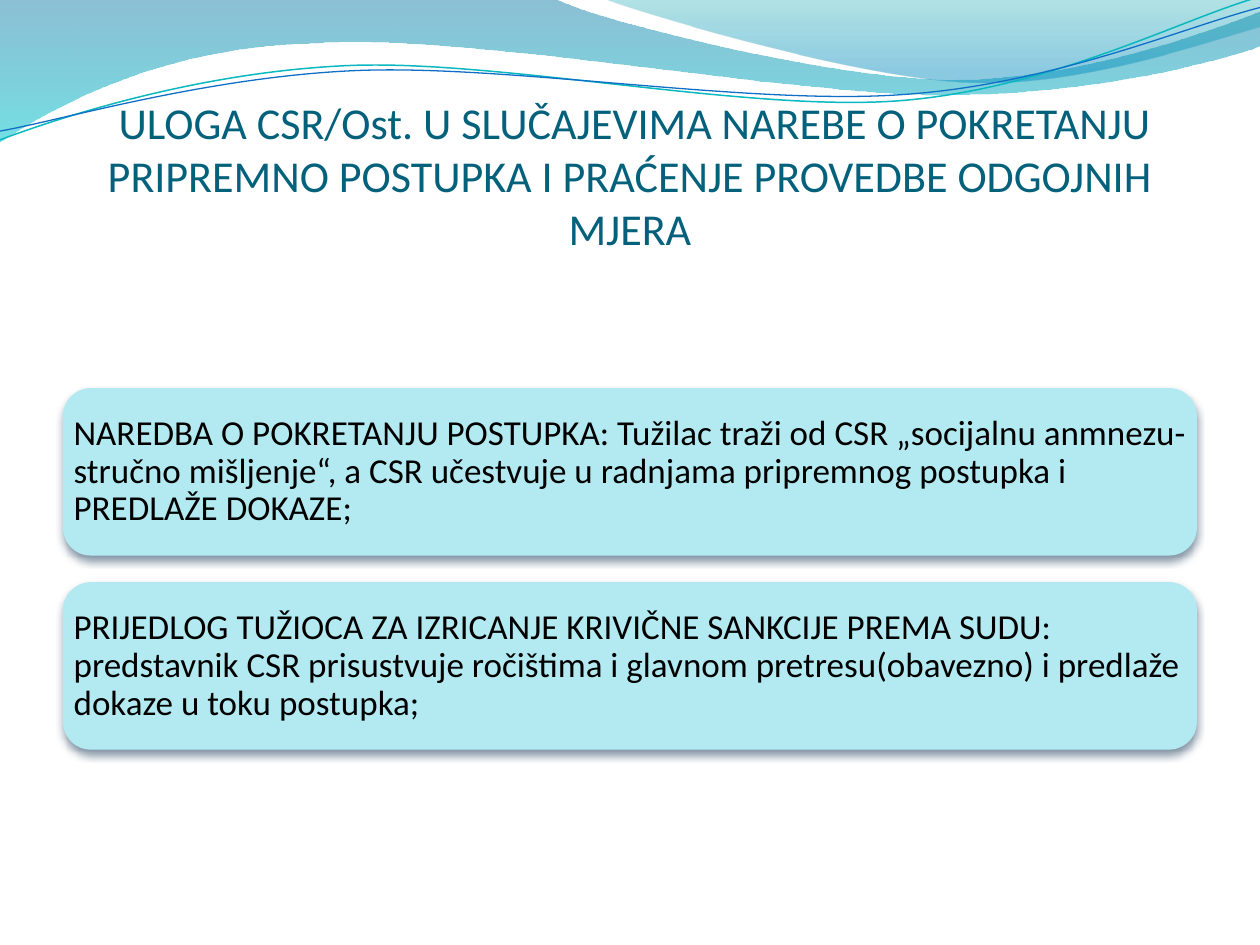
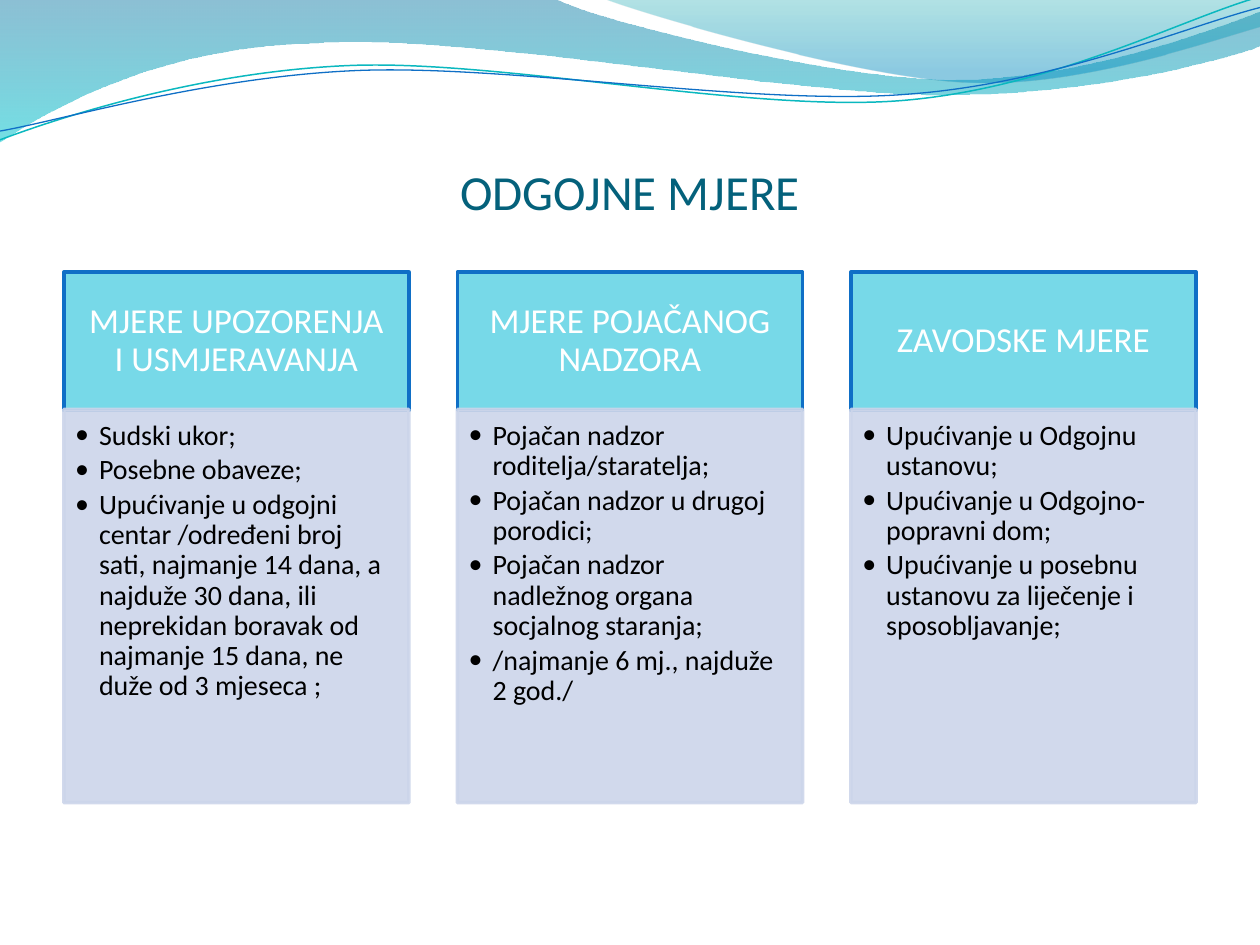
import math

from lxml import etree
from pptx import Presentation
from pptx.dml.color import RGBColor
from pptx.enum.shapes import MSO_SHAPE
from pptx.enum.text import MSO_ANCHOR, PP_ALIGN
from pptx.oxml.ns import qn
from pptx.util import Inches, Pt

RECT, ROUNDED = MSO_SHAPE.RECTANGLE, MSO_SHAPE.ROUNDED_RECTANGLE
TOP, MIDDLE, BOTTOM = MSO_ANCHOR.TOP, MSO_ANCHOR.MIDDLE, MSO_ANCHOR.BOTTOM
LEFT, CENTER = PP_ALIGN.LEFT, PP_ALIGN.CENTER

FONT = "Calibri"
TITLE_COLOR, BLACK, WHITE = "04617B", "000000", "FFFFFF"
CARD_FILL, SHADOW = "B3EAF2", "042747"
HEADER_FILL, HEADER_LINE, LIST_FILL = "77D9E8", "0F6FC6", "CCD5EA"
MARGIN, CONTENT_WIDTH = 0.5, 9
LINE_TILT = 357.3

# Wave outlines in inches: one point is a corner, three are a Bezier curve
BIG_WAVE = [[(0, 0)], [(4.4, -0.01)],
            [(4.76, 0.17), (6.64, 0.63), (7.58, 0.63)],
            [(8.53, 0.63), (9.58, 0.26), (10, 0.09)], [(10.01, 0.36)],
            [(9.83, 0.44), (8.7, 0.76), (7.46, 0.75)],
            [(6.22, 0.75), (3.82, 0.28), (2.57, 0.34)],
            [(1.29, 0.36), (0.46, 0.83), (-0.01, 1.13)], [(0, 0)]]
RIGHT_WAVE = [[(4.79, -0.01)],
              [(5.09, 0.11), (6.82, 0.62), (7.69, 0.65)],
              [(8.56, 0.69), (9.61, 0.32), (10, 0.21)], [(10, 0)], [(4.79, -0.01)]]
TEAL_LINE = [[(0, 1.11)],
             [(0.48, 0.93), (1.58, 0.57), (2.77, 0.52)],
             [(3.95, 0.47), (5.93, 0.89), (7.13, 0.8)],
             [(8.33, 0.71), (9.38, 0.15), (9.98, -0.02)]]
BLUE_LINE = [[(0, 1.04)],
             [(0.47, 0.96), (1.64, 0.61), (2.83, 0.56)],
             [(4.03, 0.51), (5.97, 0.84), (7.17, 0.75)],
             [(8.36, 0.67), (9.41, 0.21), (10, 0.06)]]

CARDS = [
    "NAREDBA O POKRETANJU POSTUPKA: Tužilac traži od CSR „socijalnu anmnezu-stručno "
    "mišljenje“, a CSR učestvuje u radnjama pripremnog postupka i PREDLAŽE DOKAZE;",
    "PRIJEDLOG TUŽIOCA ZA IZRICANJE KRIVIČNE SANKCIJE PREMA SUDU: predstavnik CSR "
    "prisustvuje ročištima i glavnom pretresu(obavezno) i predlaže dokaze u toku postupka;",
]
MEASURES = [
    ("MJERE UPOZORENJA I USMJERAVANJA", [
        "Sudski ukor;",
        "Posebne obaveze;",
        "Upućivanje u odgojni centar /određeni broj sati, najmanje 14 dana, a najduže "
        "30 dana, ili neprekidan boravak od najmanje 15 dana, ne duže od 3 mjeseca ;"]),
    ("MJERE POJAČANOG NADZORA", [
        "Pojačan nadzor roditelja/staratelja;",
        "Pojačan nadzor u drugoj porodici;",
        "Pojačan nadzor nadležnog organa socjalnog staranja;",
        "/najmanje 6 mj., najduže 2 god./"]),
    ("ZAVODSKE MJERE", [
        "Upućivanje u Odgojnu ustanovu;",
        "Upućivanje u Odgojno-popravni dom;",
        "Upućivanje u posebnu ustanovu za liječenje i sposobljavanje;"]),
]


def color(hex_text):
    return RGBColor.from_string(hex_text)


def set_alphas(shape, percents):
    """Give the shape's colours, in order, these opacities."""
    for node, percent in zip(shape.element.spPr.iter(qn("a:srgbClr")), percents):
        etree.SubElement(node, qn("a:alpha"), val=str(percent * 1000))


def turn_outline(outline, degrees, center=(4.99, 0.57)):
    """Turn every point clockwise about the center."""
    sine, cosine = math.sin(math.radians(degrees)), math.cos(math.radians(degrees))
    cx, cy = center
    return [[(cx + (x - cx) * cosine - (y - cy) * sine,
              cy + (x - cx) * sine + (y - cy) * cosine) for x, y in segment]
            for segment in outline]


def add_outline(page, outline, close):
    points = [(Inches(x), Inches(y)) for segment in outline for x, y in segment]
    builder = page.shapes.build_freeform(*points[0])
    builder.add_line_segments(points[1:], close=close)
    shape = builder.convert_to_shape()
    shape.shadow.inherit = False
    # Join each run of three points into one curve
    corners = shape.element.spPr.iter(qn("a:lnTo"))
    corners = iter(list(corners))
    for segment in outline[1:]:
        nodes = [next(corners) for _ in segment]
        if len(nodes) == 3:
            curve = etree.Element(qn("a:cubicBezTo"))
            nodes[0].addprevious(curve)
            for node in nodes:
                curve.append(node[0])
                node.getparent().remove(node)
    return shape


def add_wave(page, outline, stops):
    shape = add_outline(page, outline, close=True)
    shape.line.fill.background()
    shape.fill.gradient()
    shape.fill.gradient_angle = 270
    for stop, (position, hex_text, _) in zip(shape.fill.gradient_stops, stops):
        stop.position = position
        stop.color.rgb = color(hex_text)
    set_alphas(shape, [alpha for _, _, alpha in stops])


def add_wave_line(page, outline, hex_text, width):
    shape = add_outline(page, turn_outline(outline, -LINE_TILT), close=False)
    shape.rotation = LINE_TILT
    shape.fill.background()
    shape.line.color.rgb = color(hex_text)
    shape.line.width = Pt(width)


def add_waves(page):
    add_wave(page, BIG_WAVE, [(0, "0074A1", 45), (1, "00C6CF", 55)])
    add_wave(page, RIGHT_WAVE, [(0, "00A1A9", 30), (0.8, "008BBF", 45)])
    add_wave_line(page, TEAL_LINE, "0AB8BF", 0.85)
    add_wave_line(page, BLUE_LINE, HEADER_LINE, 0.75)


def write(shape, lines, size, hex_text, align, anchor, insets, spacing=0.9):
    frame = shape.text_frame
    frame.word_wrap = True
    frame.vertical_anchor = anchor
    (frame.margin_left, frame.margin_top,
     frame.margin_right, frame.margin_bottom) = [Inches(inset) for inset in insets]
    frame.text = "\n".join(lines)
    for para in frame.paragraphs:
        para.alignment = align
        para.line_spacing = spacing
        for span in para.runs:
            span.font.name = FONT
            span.font.size = Pt(size)
            span.font.color.rgb = color(hex_text)


def add_bullets(shape):
    for para in shape.text_frame.paragraphs:
        para.space_after = Pt(2.6)
        properties = para._p.get_or_add_pPr()
        properties.set("marL", str(Inches(0.19)))
        properties.set("indent", str(-Inches(0.19)))
        etree.SubElement(properties, qn("a:buFont"), typeface=FONT)
        etree.SubElement(properties, qn("a:buChar"), char="•")


def add_title(page, text, size, top, height):
    box = page.shapes.add_textbox(Inches(MARGIN), Inches(top),
                                  Inches(CONTENT_WIDTH), Inches(height))
    write(box, [text], size, TITLE_COLOR, CENTER, BOTTOM, (0, 0.05, 0, 0), spacing=1.0)


def add_box(page, kind, left, top, width, height, fill, line=None):
    shape = page.shapes.add_shape(kind, Inches(left), Inches(top),
                                  Inches(width), Inches(height))
    shape.shadow.inherit = False
    shape.fill.solid()
    shape.fill.fore_color.rgb = color(fill)
    if line:
        shape.line.color.rgb = color(line)
        shape.line.width = Pt(2)
    else:
        shape.line.fill.background()
    return shape


def add_card(page, left, top, width, height, text):
    card = add_box(page, ROUNDED, left, top, width, height, CARD_FILL)
    effects = card.element.spPr.find(qn("a:effectLst"))
    shadow = etree.SubElement(effects, qn("a:outerShdw"), blurRad=str(Pt(4.5)),
                              dist=str(Pt(3)), dir="5400000", rotWithShape="0")
    shade = etree.SubElement(shadow, qn("a:srgbClr"), val=SHADOW)
    etree.SubElement(shade, qn("a:alpha"), val="48000")
    write(card, [text], 20, BLACK, LEFT, MIDDLE, (0.02, 0.01, 0.01, 0.01))


def add_measure(page, left, top, width, heading, items):
    header_height, list_height = 1.1, 3.12
    header = add_box(page, RECT, left, top, width, header_height,
                     HEADER_FILL, HEADER_LINE)
    write(header, [heading], 20, WHITE, CENTER, MIDDLE, (0.16, 0.09, 0.16, 0.09))
    body = add_box(page, RECT, left, top + header_height - 0.01, width, list_height,
                   LIST_FILL, LIST_FILL)
    set_alphas(body, [90, 90])
    write(body, items, 16, BLACK, LEFT, TOP, (0.09, 0.09, 0.12, 0.14))
    add_bullets(body)


def new_page(deck):
    page = deck.slides.add_slide(deck.slide_layouts[6])
    add_waves(page)
    return page


def build_role_slide(deck):
    page = new_page(deck)
    add_title(page, " ULOGA CSR/Ost. U SLUČAJEVIMA NAREBE O POKRETANJU PRIPREMNO "
                    "POSTUPKA I PRAĆENJE PROVEDBE ODGOJNIH MJERA", 25.2, 0.77, 1.25)
    height, gap = 1.33, 0.21
    for index, text in enumerate(CARDS):
        add_card(page, MARGIN, 3.08 + index * (height + gap), CONTENT_WIDTH, height, text)


def build_measures_slide(deck):
    page = new_page(deck)
    add_title(page, "ODGOJNE MJERE", 28, 0.92, 0.83)
    width = 2.74
    step = 1.14 * width
    first = MARGIN + (CONTENT_WIDTH - width - step * (len(MEASURES) - 1)) / 2
    for index, (heading, items) in enumerate(MEASURES):
        add_measure(page, first + index * step, 2.16, width, heading, items)


def main():
    deck = Presentation()
    deck.slide_width, deck.slide_height = Inches(10), Inches(7.5)
    build_role_slide(deck)
    build_measures_slide(deck)
    deck.save("out.pptx")


if __name__ == "__main__":
    main()
